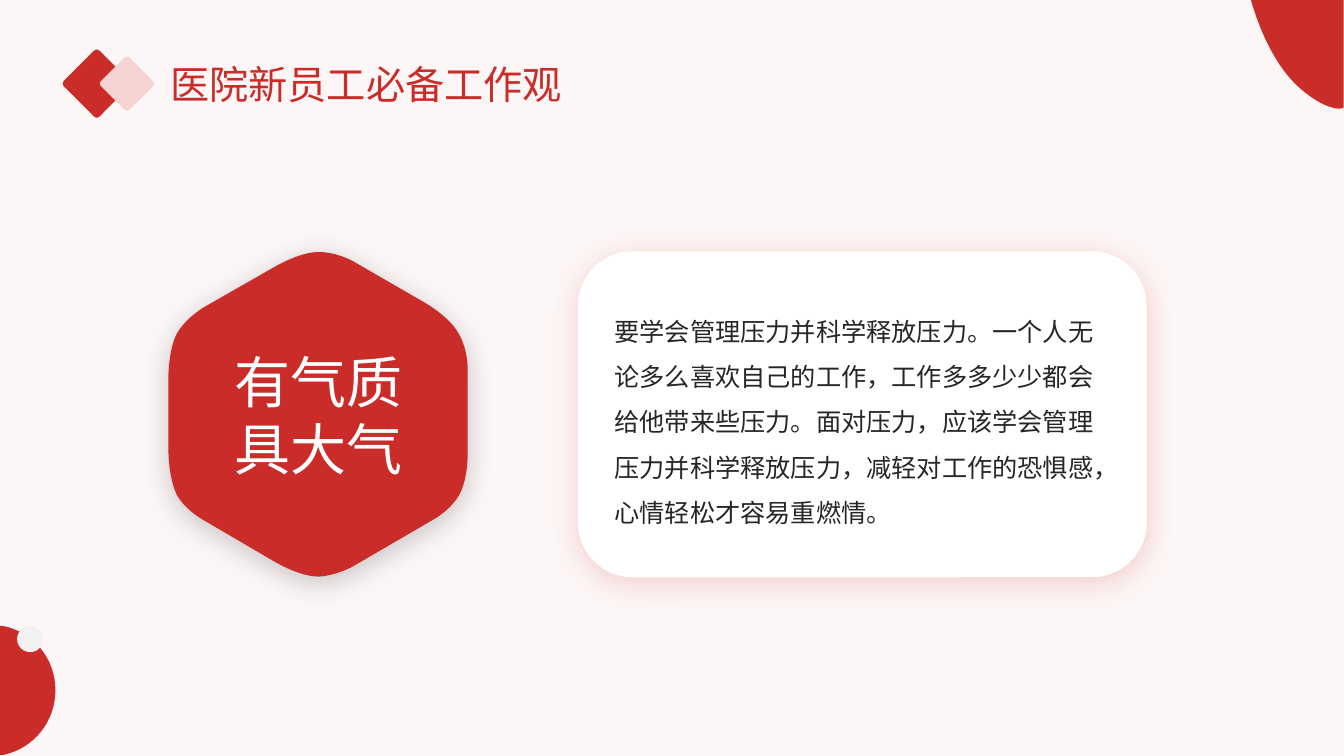
"""Build the hospital work-outlook slide with a hexagon badge and a text card."""
from dataclasses import dataclass
from itertools import chain

from lxml.etree import SubElement
from pptx import Presentation
from pptx.dml.color import RGBColor
from pptx.enum.shapes import MSO_SHAPE as Preset
from pptx.enum.text import MSO_ANCHOR as Anchor, MSO_AUTO_SIZE as AutoSize, PP_ALIGN as Align
from pptx.oxml.ns import qn
from pptx.util import Emu, Pt


@dataclass(frozen=True)
class Theme:
    """Colours, font and type sizes."""
    red: str = "CA2C29"
    pink: str = "F6D3D3"
    ground: str = "FDF6F6"
    white: str = "FFFFFF"
    grey: str = "F2F2F2"
    ink: str = "262626"
    black: str = "000000"
    font: str = "Noto Sans CJK SC"
    title: int = 28
    badge: int = 40
    body: int = 18


THEME = Theme()
PX = 9144
PAGE_SIZE = (Emu(12192000), Emu(6858000))

TITLE = "医院新员工必备工作观"
BADGE_LINES = ["有气质", "具大气"]
CARD_LINES = ["要学会管理压力并科学释放压力。一个人无论多么喜欢自己的工作，工作多多少少都会"
              "给他带来些压力。面对压力，应该学会管理压力并科学释放压力，减轻对工作的恐惧感，"
              "心情轻松才容易重燃情。"]

TITLE_BOX = (159, 55, 413, 57)
CARD_BOX = (574, 250, 563, 322)
DOT_BOX = (17, 621, 26, 26)
DIAMONDS = [((71, 58, 50, 50), 0.076, THEME.red), ((106, 63, 40, 40), 0.085, THEME.pink)]

CORNER_BLOB = [
    [(1333, 0)],
    [(1333, 107)],
    [(1330, 108), (1326, 108), (1323, 107)],
    [(1314, 105), (1306, 100), (1299, 95)],
    [(1282, 83), (1270, 67), (1260, 48)],
    [(1252, 33), (1246, 17), (1241, 0)],
]
HALF_DISC = [
    [(0, 621)],
    [(0, 749)],
    [(3, 749)],
    [(33, 743), (55, 716), (55, 685)],
    [(55, 653), (33, 627), (3, 621)],
]
HEXAGON = [
    [(272, 265)],
    [(202, 305)],
    [(202, 305), (185, 315), (176, 330)],
    [(167, 346), (167, 375), (167, 375)],
    [(167, 446)],
    [(167, 446), (167, 475), (176, 492)],
    [(185, 507), (202, 516), (202, 516)],
    [(272, 557)],
    [(272, 557), (297, 572), (316, 572)],
    [(334, 571), (350, 562), (350, 562)],
    [(429, 516)],
    [(429, 516), (446, 507), (455, 492)],
    [(465, 475), (464, 447), (464, 447)],
    [(464, 365)],
    [(464, 365), (464, 346), (455, 331)],
    [(446, 314), (421, 300), (421, 300)],
    [(350, 259)],
    [(350, 259), (334, 250), (316, 250)],
    [(297, 250), (272, 265), (272, 265)],
]


def emu(lengths):
    return [length * PX for length in lengths]


def assign(target, **values):
    for name, value in values.items():
        setattr(target, name, value)


def paint(shape, fill, line=None, shadow=None):
    shape.fill.solid()
    shape.fill.fore_color.rgb = RGBColor.from_string(fill)
    if line:
        shape.line.color.rgb = RGBColor.from_string(line)
        shape.line.width = Pt(1)
    else:
        shape.line.fill.background()
    shape.shadow.inherit = False
    if shadow:
        effects = shape._element.spPr.find(qn("a:effectLst"))
        outer = SubElement(effects, qn("a:outerShdw"), blurRad=str(Pt(20)), dist=str(Pt(4)),
                           dir="5400000", algn="t", rotWithShape="0")
        tint = SubElement(outer, qn("a:srgbClr"), val=shadow)
        SubElement(tint, qn("a:alpha"), val="20000")
    return shape


def add_preset(page, preset, box, fill, **style):
    return paint(page.shapes.add_shape(preset, *emu(box)), fill, **style)


def add_outline(page, steps, fill, **style):
    start, *points = [emu(point) for point in chain.from_iterable(steps)]
    builder = page.shapes.build_freeform(*start)
    builder.add_line_segments(points, close=True)
    shape = builder.convert_to_shape()
    segments = iter(list(shape._element.iter(qn("a:lnTo"))))
    for step in steps[1:]:
        first, *others = [next(segments) for _ in step]
        for segment in others:
            first.append(segment[0])
            segment.getparent().remove(segment)
        if others:
            first.tag = qn("a:cubicBezTo")
    return paint(shape, fill, **style)


def write(shape, lines, size, color, align, spacing=None, **frame_format):
    frame = shape.text_frame
    assign(frame, **frame_format)
    for index, line in enumerate(lines):
        para = frame.add_paragraph() if index else frame.paragraphs[0]
        assign(para, alignment=align, line_spacing=spacing)
        span = para.add_run()
        span.text = line
        assign(span.font, size=Pt(size), name=THEME.font)
        span.font.color.rgb = RGBColor.from_string(color)
        SubElement(span.font._element, qn("a:ea"), typeface=THEME.font)


def main():
    deck = Presentation()
    deck.slide_width, deck.slide_height = PAGE_SIZE
    page = deck.slides.add_slide(deck.slide_layouts[5])
    page.background.fill.solid()
    page.background.fill.fore_color.rgb = RGBColor.from_string(THEME.ground)

    add_outline(page, CORNER_BLOB, THEME.red)
    add_outline(page, HALF_DISC, THEME.red)
    add_preset(page, Preset.OVAL, DOT_BOX, THEME.grey)

    title = page.shapes.title
    assign(title, **dict(zip(("left", "top", "width", "height"), emu(TITLE_BOX))))
    write(title, [TITLE], THEME.title, THEME.red, Align.LEFT, word_wrap=False,
          auto_size=AutoSize.SHAPE_TO_FIT_TEXT, vertical_anchor=Anchor.TOP)

    for box, roundness, color in DIAMONDS:
        diamond = add_preset(page, Preset.ROUNDED_RECTANGLE, box, color)
        diamond.rotation = 45
        diamond.adjustments[0] = roundness

    card = add_preset(page, Preset.ROUNDED_RECTANGLE, CARD_BOX, THEME.white,
                      line=THEME.white, shadow=THEME.red)
    write(card, CARD_LINES, THEME.body, THEME.ink, Align.LEFT, spacing=1.5, word_wrap=True,
          vertical_anchor=Anchor.MIDDLE, margin_left=20 * PX, margin_right=20 * PX)

    badge = add_outline(page, HEXAGON, THEME.red, shadow=THEME.black)
    write(badge, BADGE_LINES, THEME.badge, THEME.white, Align.CENTER, word_wrap=True,
          vertical_anchor=Anchor.MIDDLE)

    deck.save("out.pptx")


if __name__ == "__main__":
    main()
